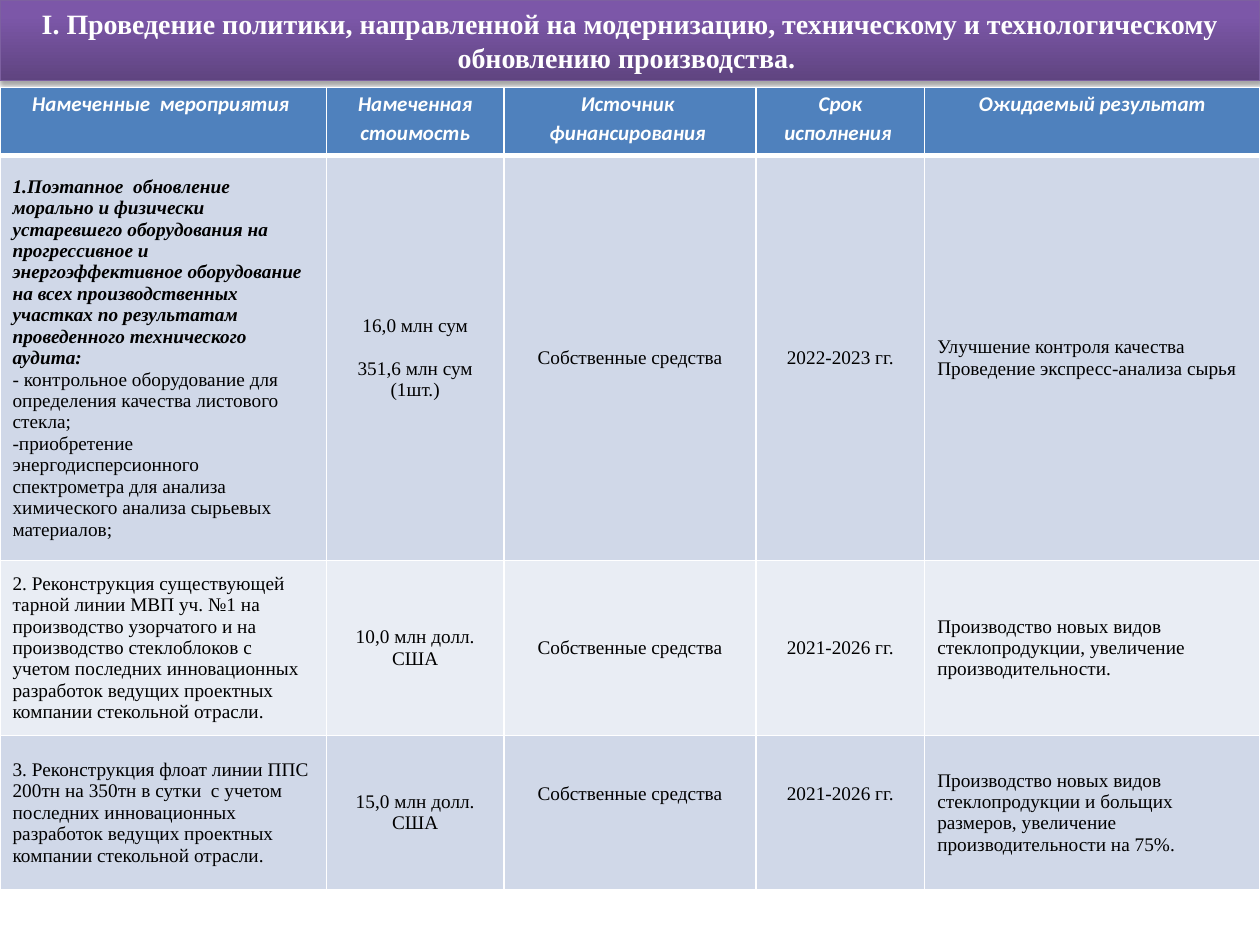
import pptx
import pptx.util
import pptx.dml.color
import pptx.enum.shapes
import pptx.enum.text
import pptx.oxml
import pptx.oxml.ns

Cm = pptx.util.Cm
Pt = pptx.util.Pt
RGBColor = pptx.dml.color.RGBColor
Align = pptx.enum.text.PP_ALIGN
Anchor = pptx.enum.text.MSO_ANCHOR

WHITE = RGBColor(0xFF, 0xFF, 0xFF)
BLACK = RGBColor(0x00, 0x00, 0x00)
PURPLE_DARK = RGBColor(0x5F, 0x44, 0x80)
PURPLE_LIGHT = RGBColor(0x7C, 0x57, 0xA8)
PURPLE_LINE = RGBColor(0x7D, 0x60, 0xA0)
HEADER_BLUE = RGBColor(0x4F, 0x81, 0xBD)
BAND_DARK = RGBColor(0xD0, 0xD8, 0xE8)
BAND_LIGHT = RGBColor(0xE9, 0xED, 0xF4)
NAMESPACE = pptx.oxml.ns.nsdecls("a")


def write(frame, text, font="Times New Roman", size=11, color=BLACK,
          bold=False, italic=False, align=Align.LEFT, spacing=None):
    for index, line in enumerate(text.split("\n")):
        para = frame.add_paragraph() if index else frame.paragraphs[0]
        para.alignment = align
        para.line_spacing = spacing
        span = para.add_run()
        span.text = line
        span.font.name = font
        span.font.size = Pt(size)
        span.font.bold = bold
        span.font.italic = italic
        span.font.color.rgb = color


deck = pptx.Presentation()
deck.slide_width = Cm(25.4)
deck.slide_height = Cm(19.05)
page = deck.slides.add_slide(deck.slide_layouts[6])

banner = page.shapes.add_shape(
    pptx.enum.shapes.MSO_SHAPE.RECTANGLE, 0, 0, deck.slide_width, Cm(1.63))
banner.fill.gradient()
banner.fill.gradient_angle = 90
for stop, position, color in zip(
        banner.fill.gradient_stops, (0, 0.8), (PURPLE_DARK, PURPLE_LIGHT)):
    stop.position = position
    stop.color.rgb = color
banner.line.color.rgb = PURPLE_LINE
banner.line.width = Pt(0.75)
banner.shadow.inherit = False
effects = banner._element.spPr.find(pptx.oxml.ns.qn("a:effectLst"))
effects.append(pptx.oxml.parse_xml(
    f'<a:outerShdw {NAMESPACE} blurRad="{Pt(3.1)}" dist="{Pt(1.8)}" dir="5400000" rotWithShape="0">'
    '<a:srgbClr val="000000"><a:alpha val="35000"/></a:srgbClr></a:outerShdw>'))
banner.text_frame.word_wrap = True
banner.text_frame.vertical_anchor = Anchor.MIDDLE
write(banner.text_frame,
      "I. Проведение политики, направленной на модернизацию, техническому "
      "и технологическому обновлению производства. ",
      size=16, color=WHITE, bold=True, align=Align.CENTER)

rows = [
    ["Намеченные  мероприятия ", "Намеченная\nстоимость",
     "Источник  финансирования ", "Срок исполнения ", "Ожидаемый результат"],
    ["1.Поэтапное  обновление морально и физически устаревшего оборудования "
     "на прогрессивное и энергоэффективное оборудование на всех "
     "производственных участках по результатам  проведенного технического аудита:\n"
     "- контрольное оборудование для определения качества листового стекла;\n"
     "-приобретение энергодисперсионного спектрометра для анализа "
     "химического анализа сырьевых материалов;",
     "16,0 млн сум\n351,6 млн сум\n(1шт.)", "Собственные средства", "2022-2023 гг.",
     "Улучшение контроля качества\nПроведение экспресс-анализа сырья"],
    ["2. Реконструкция существующей тарной линии МВП уч. №1 на производство "
     "узорчатого и на производство стеклоблоков с учетом последних "
     "инновационных разработок ведущих проектных компании стекольной отрасли.",
     "10,0 млн долл. США", "Собственные средства", "2021-2026 гг.",
     "Производство новых видов стеклопродукции, увеличение производительности."],
    ["3. Реконструкция флоат линии ППС 200тн на 350тн в сутки  с учетом "
     "последних инновационных разработок ведущих проектных компании "
     "стекольной отрасли.",
     "15,0 млн долл. США", "Собственные средства", "2021-2026 гг.",
     "Производство новых видов стеклопродукции и больщих размеров, "
     "увеличение производительности на 75%."],
]
widths = [6.58, 3.58, 5.08, 3.4, 6.76]
heights = [1.38, 8.16, 3.53, 3.11]

table = page.shapes.add_table(
    len(rows), len(widths), 0, Cm(1.76), Cm(sum(widths)), Cm(sum(heights))).table
for column, width in zip(table.columns, widths):
    column.width = Cm(width)
for row, height in zip(table.rows, heights):
    row.height = Cm(height)

for r, texts in enumerate(rows):
    for c, text in enumerate(texts):
        cell = table.cell(r, c)
        for side in "LRTB":
            thick = (r == 0 and side == "B") or (r == 1 and side == "T")
            cell._tc.get_or_add_tcPr().append(pptx.oxml.parse_xml(
                f'<a:ln{side} {NAMESPACE} w="{Pt(3 if thick else 1)}">'
                f'<a:solidFill><a:srgbClr val="{WHITE}"/></a:solidFill></a:ln{side}>'))
        cell.fill.solid()
        if r == 0:
            cell.fill.fore_color.rgb = HEADER_BLUE
            cell.margin_left = cell.margin_right = Cm(0.18)
            cell.margin_top = cell.margin_bottom = 0
            write(cell.text_frame, text, font="Calibri", size=12, color=WHITE,
                  bold=True, italic=True, align=Align.CENTER, spacing=1.15)
        else:
            cell.fill.fore_color.rgb = BAND_DARK if r % 2 else BAND_LIGHT
            cell.vertical_anchor = Anchor.MIDDLE
            write(cell.text_frame, text,
                  align=Align.LEFT if c in (0, 4) else Align.CENTER)

lead = table.cell(1, 0).text_frame.paragraphs[0].runs[0]
lead.font.bold = lead.font.italic = True
table.cell(1, 1).text_frame.paragraphs[0].space_after = Pt(12)
for c in (2, 3):
    table.cell(3, c).margin_bottom = Cm(0.9)

deck.save("out.pptx")
